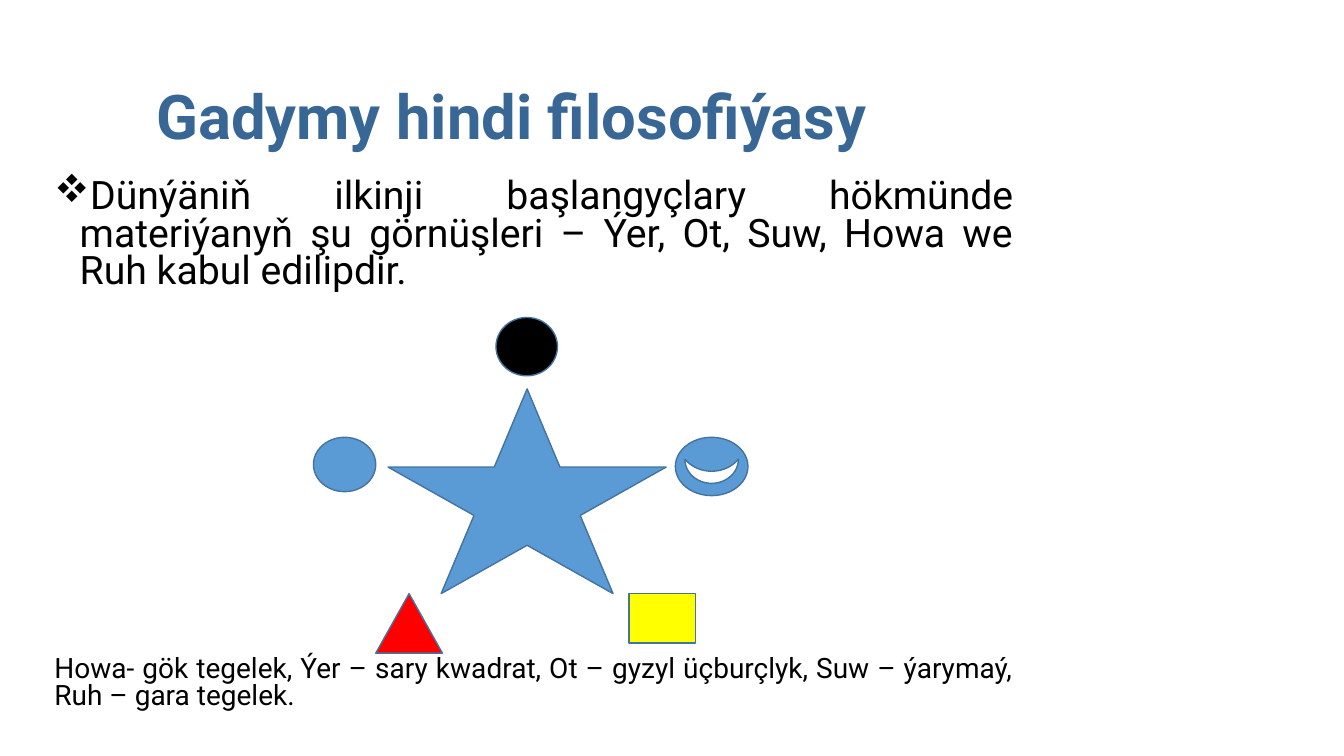
from pptx import Presentation
from pptx.util import Cm, Pt
from pptx.dml.color import RGBColor
from pptx.enum.shapes import MSO_SHAPE as SHAPE
from pptx.enum.text import MSO_ANCHOR as ANCHOR, PP_ALIGN as ALIGN
from pptx.oxml.ns import qn
from lxml import etree

COLORS = {"title": "386796", "text": "000000", "blue": "5B9BD5", "outline": "43739E",
          "black": "000000", "red": "FF0000", "yellow": "FFFF00", "white": "FFFFFF"}


def rgb(name):
    return RGBColor.from_string(COLORS[name])


def add_text(text, top, width, height, size, color, align, spacing):
    box = slide.shapes.add_textbox(Cm(1.12), Cm(top), Cm(width), Cm(height))
    tf = box.text_frame
    tf.word_wrap = True
    p = tf.paragraphs[0]
    p.text = text
    p.alignment = align
    p.line_spacing = spacing
    r = p.runs[0]
    r.font.name = "Roboto"
    r.font.size = Pt(size)
    r.font.color.rgb = rgb(color)
    return tf


prs = Presentation()
prs.slide_width, prs.slide_height = Cm(33.87), Cm(19.05)
slide = prs.slides.add_slide(prs.slide_layouts[6])

title = add_text("Gadymy hindi filosofiýasy ", 1.17, 23.95, 3.68, 44, "title", ALIGN.CENTER, 0.9)
title.vertical_anchor = ANCHOR.MIDDLE
title.paragraphs[0].runs[0].font.bold = True

body = add_text("Dünýäniň ilkinji başlangyçlary hökmünde materiýanyň şu görnüşleri – "
                "Ýer, Ot, Suw, Howa we Ruh kabul edilipdir.",
                4.4, 24.66, 3.2, 28, "text", ALIGN.JUSTIFY, 0.8)
pPr = body.paragraphs[0]._p.get_or_add_pPr()
pPr.set("marL", str(Cm(0.64)))
pPr.set("indent", str(-Cm(0.64)))
bullet_font = etree.SubElement(pPr, qn("a:buFont"))
bullet_font.set("typeface", "Wingdings")
bullet_font.set("charset", "2")
etree.SubElement(pPr, qn("a:buChar")).set("char", "v")

add_text("Howa- gök tegelek, Ýer – sary kwadrat, Ot – gyzyl üçburçlyk, Suw – ýarymaý, "
         "Ruh – gara tegelek.",
         16.44, 24.66, 1.8, 20, "text", ALIGN.JUSTIFY, 0.8)

symbols = [
    (SHAPE.STAR_5_POINT, 9.78, 9.8, 7.01, 5.16, "blue", 0),
    (SHAPE.OVAL, 12.5, 8, 1.55, 1.47, "black", 0),
    (SHAPE.OVAL, 7.9, 11.02, 1.57, 1.37, "blue", 0),
    (SHAPE.OVAL, 17.02, 11.02, 1.83, 1.47, "blue", 0),
    (SHAPE.ISOSCELES_TRIANGLE, 9.47, 14.96, 1.68, 1.5, "red", 0),
    (SHAPE.RECTANGLE, 15.85, 14.96, 1.68, 1.24, "yellow", 0),
    (SHAPE.ARC, 17.02, 11.71, 1.83, 0.13, None, 0),
    (SHAPE.MOON, 17.63, 11.2, 0.61, 1.35, "white", 270),
]
for kind, left, top, width, height, fill, rotation in symbols:
    sp = slide.shapes.add_shape(kind, Cm(left), Cm(top), Cm(width), Cm(height))
    sp.shadow.inherit = False
    sp.rotation = rotation
    if fill:
        sp.fill.solid()
        sp.fill.fore_color.rgb = rgb(fill)
    else:
        sp.fill.background()
    sp.line.color.rgb = rgb("outline" if fill else "blue")
    sp.line.width = Pt(1 if fill else 0.5)

prs.save("out.pptx")
